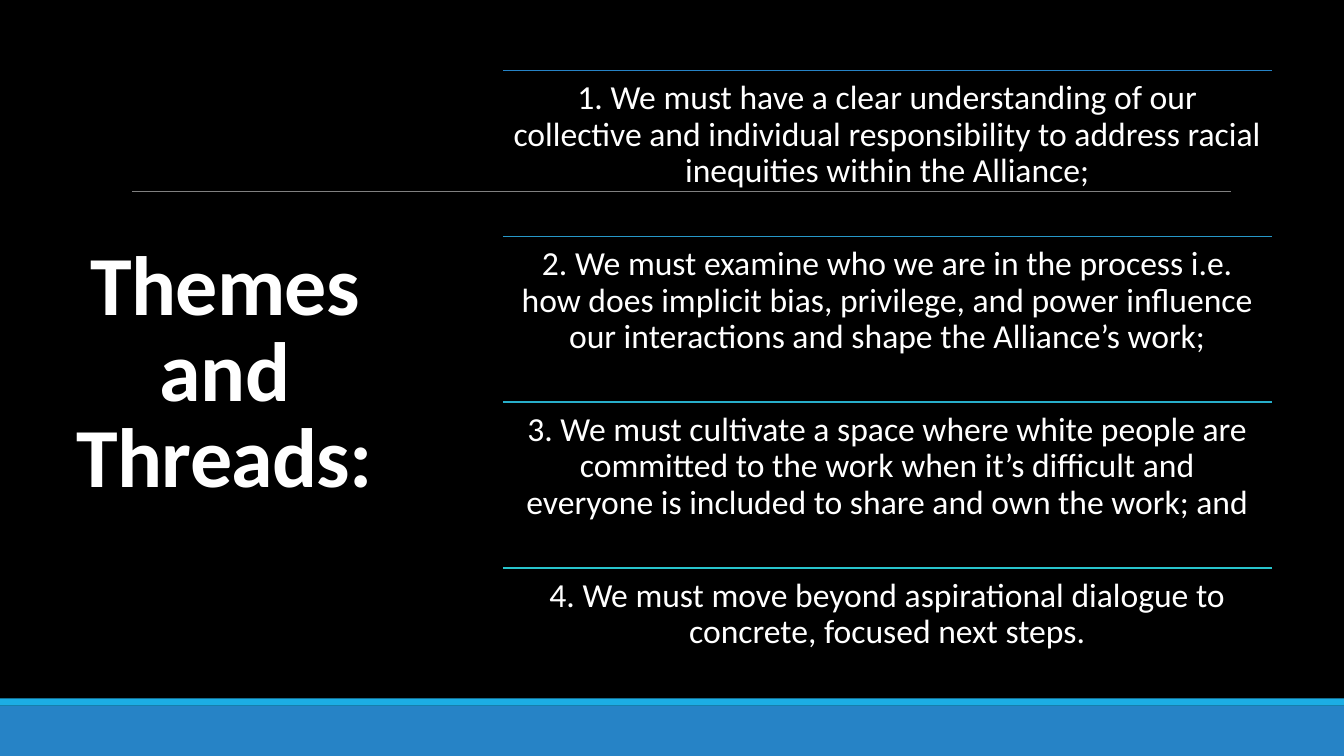
from dataclasses import dataclass

from lxml import etree
from pptx import Presentation
from pptx.dml.color import RGBColor
from pptx.enum.shapes import MSO_CONNECTOR, MSO_SHAPE
from pptx.enum.text import MSO_ANCHOR, PP_ALIGN
from pptx.oxml.ns import qn
from pptx.slide import Slide
from pptx.text.text import _Paragraph
from pptx.util import Emu, Pt

EMU_PER_PX = 9525
SLIDE_WIDTH, SLIDE_HEIGHT = 1280, 720
TITLE_ONLY_LAYOUT = 5
RECTANGLE = MSO_SHAPE.RECTANGLE
STRAIGHT = MSO_CONNECTOR.STRAIGHT
CENTER = PP_ALIGN.CENTER
TOP, MIDDLE = MSO_ANCHOR.TOP, MSO_ANCHOR.MIDDLE
FONT_NAME = "Calibri"
BLACK, WHITE = "000000", "FFFFFF"
THEME_LEFT, THEME_TOP, THEME_WIDTH, THEME_HEIGHT = 479, 67, 732, 158
THEME_INSET = 10


@dataclass
class Band:
    top: int
    height: int
    color: str


@dataclass
class Theme:
    text: str
    line_color: str


BANDS = [Band(672, 48, "2683C6"), Band(665, 7, "1CADE4")]
THEMES = [
    Theme("1. We must have a clear understanding of our collective and individual "
          "responsibility to address racial inequities within the Alliance;", "2683C6"),
    Theme("2. We must examine who we are in the process i.e. how does implicit bias, "
          "privilege, and power influence our interactions and shape the Alliance’s work;",
          "2798C8"),
    Theme("3. We must cultivate a space where white people are committed to the work when "
          "it’s difficult and everyone is included to share and own the work; and", "27AECA"),
    Theme("4. We must move beyond aspirational dialogue to concrete, focused next steps.",
          "28C4CC"),
]


def px(length: int) -> Emu:
    return Emu(length * EMU_PER_PX)


def rgb(color: str) -> RGBColor:
    return RGBColor.from_string(color)


def format_paragraph(paragraph: _Paragraph, size: int, spacing: float, bold: bool) -> None:
    paragraph.alignment = CENTER
    paragraph.line_spacing = spacing
    font = paragraph.font
    font.name, font.size, font.bold = FONT_NAME, Pt(size), bold
    font.color.rgb = rgb(WHITE)


def add_band(slide: Slide, band: Band) -> None:
    shape = slide.shapes.add_shape(
        RECTANGLE, 0, px(band.top), px(SLIDE_WIDTH), px(band.height))
    shape.shadow.inherit = False
    shape.fill.solid()
    shape.fill.fore_color.rgb = rgb(band.color)
    shape.line.fill.background()


def add_rule(slide: Slide, left: int, right: int, top: int, color: str, weight: float) -> None:
    connector = slide.shapes.add_connector(STRAIGHT, px(left), px(top), px(right), px(top))
    connector.line.color.rgb = rgb(color)
    connector.line.width = Pt(weight)
    etree.SubElement(connector._element.spPr, qn("a:effectLst"))


def set_title(slide: Slide) -> None:
    title = slide.shapes.title
    title.left, title.top, title.width, title.height = px(52), px(55), px(324), px(606)
    frame = title.text_frame
    frame.text = "Themes and Threads:"
    frame.word_wrap = True
    frame.vertical_anchor = MIDDLE
    paragraph = frame.paragraphs[0]
    format_paragraph(paragraph, 60, 0.85, True)
    paragraph.runs[0].font._element.set("spc", "-50")


def add_theme(slide: Slide, theme: Theme, top: int) -> None:
    add_rule(slide, THEME_LEFT, THEME_LEFT + THEME_WIDTH, top, theme.line_color, 1)
    text_box = slide.shapes.add_textbox(
        px(THEME_LEFT), px(top), px(THEME_WIDTH), px(THEME_HEIGHT))
    frame = text_box.text_frame
    frame.word_wrap = True
    frame.vertical_anchor = TOP
    frame.margin_left = frame.margin_right = px(THEME_INSET)
    frame.margin_top = frame.margin_bottom = px(THEME_INSET)
    frame.text = theme.text
    format_paragraph(frame.paragraphs[0], 24, 0.9, False)


def main() -> None:
    presentation = Presentation()
    presentation.slide_width = px(SLIDE_WIDTH)
    presentation.slide_height = px(SLIDE_HEIGHT)
    slide = presentation.slides.add_slide(presentation.slide_layouts[TITLE_ONLY_LAYOUT])
    slide.background.fill.solid()
    slide.background.fill.fore_color.rgb = rgb(BLACK)
    for band in BANDS:
        add_band(slide, band)
    add_rule(slide, 126, 1172, 182, "808080", 0.5)
    set_title(slide)
    for index, theme in enumerate(THEMES):
        add_theme(slide, theme, THEME_TOP + index * THEME_HEIGHT)
    presentation.save("out.pptx")


if __name__ == "__main__":
    main()
